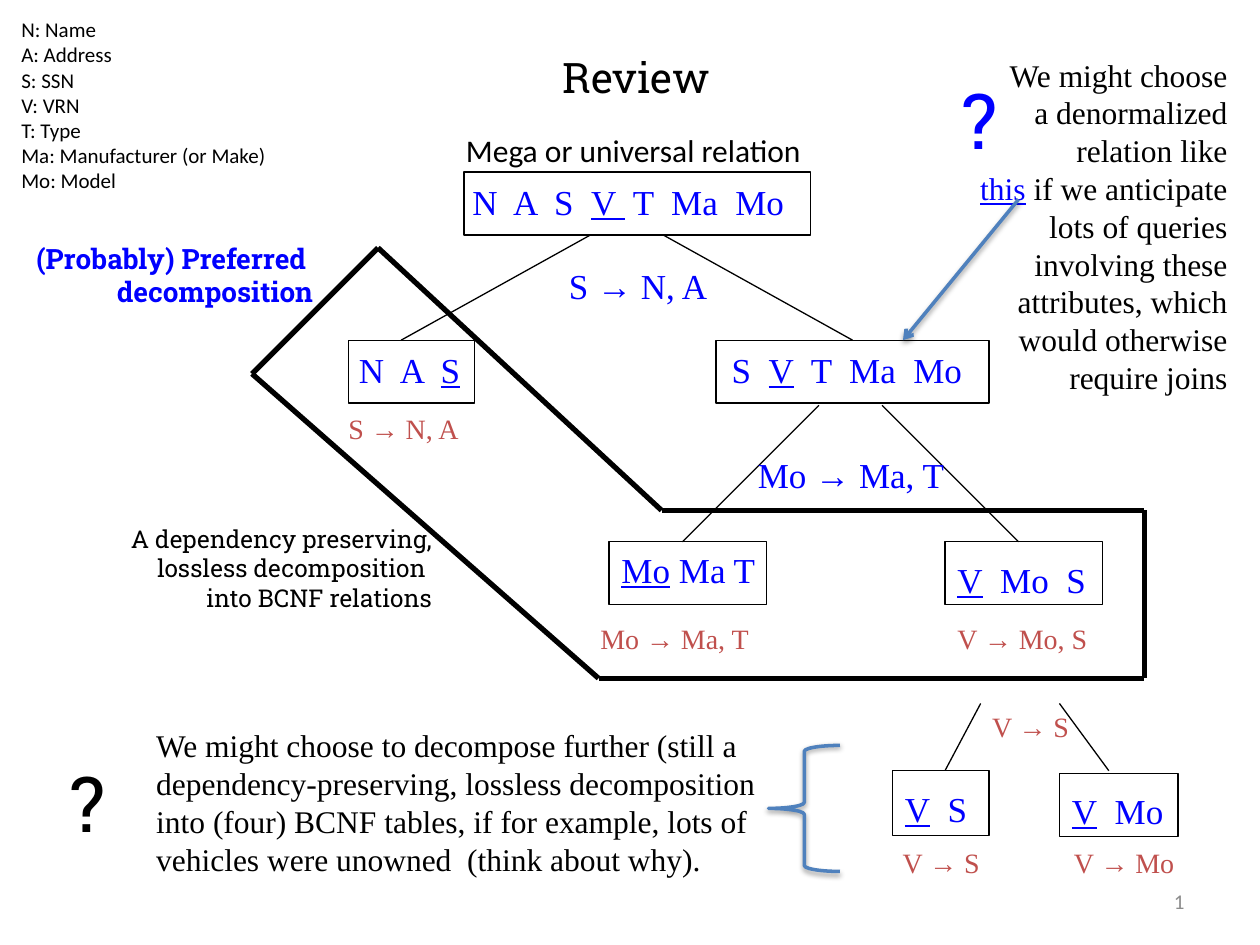
from itertools import pairwise
from lxml.etree import SubElement
from pptx import Presentation
from pptx.dml.color import RGBColor
from pptx.enum.shapes import MSO_CONNECTOR, MSO_SHAPE
from pptx.enum.text import MSO_ANCHOR, MSO_AUTO_SIZE, PP_ALIGN
from pptx.oxml.ns import qn
from pptx.util import Inches, Pt

BLACK = RGBColor(0x00, 0x00, 0x00)
BLUE = RGBColor(0x00, 0x00, 0xFF)
RED = RGBColor(0xC0, 0x50, 0x4D)
STEEL = RGBColor(0x4F, 0x81, 0xBD)
GRAY = RGBColor(0x8C, 0x8C, 0x8C)
SERIF, SLAB, SANS = "Times New Roman", "Roboto Slab", "Calibri"

prs = Presentation()
prs.slide_width, prs.slide_height = Inches(10), Inches(7.5)
s = prs.slides.add_slide(prs.slide_layouts[6])
COL = prs.slide_width / 120
ROW = prs.slide_height / 90


def add_text(text, x, y, w, h, size=20, font=SERIF, color=BLACK, bold=False,
             align=PP_ALIGN.LEFT, wrap=False, anchor=MSO_ANCHOR.TOP):
    sp = s.shapes.add_textbox(int(x * COL), int(y * ROW), int(w * COL), int(h * ROW))
    tf = sp.text_frame
    tf.word_wrap = wrap
    tf.auto_size = MSO_AUTO_SIZE.SHAPE_TO_FIT_TEXT if anchor == MSO_ANCHOR.TOP else MSO_AUTO_SIZE.NONE
    tf.vertical_anchor = anchor
    for i, line in enumerate(text.split("\n")):
        p = tf.paragraphs[0] if i == 0 else tf.add_paragraph()
        p.alignment = align
        for j, part in enumerate(line.split("_")):
            if not part:
                continue
            underlined = j % 2 == 1
            r = p.add_run()
            r.text = part
            r.font.size, r.font.name, r.font.bold = Pt(size), font, bold
            r.font.underline = underlined
            r.font.color.rgb = BLUE if underlined else color


def add_line(start, end, width=0.75, color=BLACK):
    cn = s.shapes.add_connector(MSO_CONNECTOR.STRAIGHT, int(start[0] * COL), int(start[1] * ROW),
                                int(end[0] * COL), int(end[1] * ROW))
    cn.line.width, cn.line.color.rgb = Pt(width), color
    SubElement(cn._element.spPr, qn("a:effectLst"))
    return cn


relations = {}
for name, x, y, w, h, text, tx, ty, tw in [
    ("universal", 44.2, 16.4, 33, 6, "N  A  S  _V _ T  Ma  Mo", 43.8, 16.6, 32.8),
    ("person", 33.2, 32.4, 12, 6, "N  A  _S_", 33, 32.6, 13),
    ("vehicle", 68.2, 32.4, 26, 6, "S  _V_  T  Ma  Mo", 68.5, 32.6, 25.5),
    ("model", 58, 51.6, 15, 6, "_Mo_ Ma T", 58, 51.6, 15.2),
    ("registration", 90, 51.6, 15, 6, "_V_  Mo  S", 90, 52.6, 14.9),
    ("owner", 85, 73.4, 9.2, 6.2, "_V_  S", 85, 74.4, 8.5),
    ("make", 100.9, 73.7, 11.3, 6, "_V_  Mo", 100.9, 74.6, 11.3),
]:
    sp = s.shapes.add_shape(MSO_SHAPE.RECTANGLE, int(x * COL), int(y * ROW), int(w * COL), int(h * ROW))
    sp.shadow.inherit = False
    sp.fill.background()
    sp.line.width, sp.line.color.rgb = Pt(0.75), BLACK
    relations[name] = sp
    add_text(text, tx, ty, tw, 5.2, color=BLUE)

for start, end, child in [
    ((56.2, 22.4), (38.2, 32.4), None),
    ((63.2, 22.4), (81.2, 32.4), "vehicle"),
    ((78, 38.6), (65, 51.6), None),
    ((84, 38.6), (97, 51.6), None),
    ((93.4, 67), (90, 73.4), None),
    ((100.9, 67), (105.6, 73.4), None),
]:
    cn = add_line(start, end)
    if child:
        cn.end_connect(relations[child], 0)

outline = [(24, 35.6), (57, 64.6), (109, 64.6), (109, 48.6), (63, 48.6), (36, 23.6), (24, 35.6)]
for start, end in pairwise(outline):
    add_line(start, end, width=3)

for text, x, y, w in [("S → N, A", 53, 24.6, 15.7), ("Mo → Ma, T", 71, 42.6, 20.2)]:
    add_text(text, x, y, w, 5.2, color=BLUE)

for text, x, y, w in [
    ("S → N, A", 32, 38.6, 13),
    ("Mo → Ma, T", 56, 58.6, 16.6),
    ("V → Mo, S", 90, 58.6, 15.5),
    ("V → S", 93.3, 67, 9.8),
    ("V → S", 84.8, 79.9, 9.8),
    ("V → Mo", 101.1, 79.9, 12),
]:
    add_text(text, x, y, w, 4.4, size=16, color=RED)

add_text("Review", 52.4, 4.3, 18.6, 6, size=24, font=SLAB, wrap=True)
add_text("Mega or universal relation", 43.2, 11.9, 34.8, 4.8, size=18, font=SANS)
add_text("N: Name\nA: Address\nS: SSN\nV: VRN\nT: Type\nMa: Manufacturer (or Make)\nMo: Model",
         0.85, 1, 26, 18.1, size=12, font=SANS)
add_text("(Probably) Preferred \ndecomposition", 0.9, 22.4, 30.1, 7.7, size=16, font=SLAB,
         color=BLUE, bold=True, align=PP_ALIGN.RIGHT)
add_text("A dependency preserving,\nlossless decomposition \ninto BCNF relations",
         10.45, 49.3, 31.9, 9.7, size=14, font=SLAB, align=PP_ALIGN.RIGHT)
add_text("We might choose\na denormalized\nrelation like\n_this_ if we anticipate lots of queries\n"
         "involving these attributes, which would otherwise\nrequire joins",
         90, 4.7, 28.1, 34, size=18, align=PP_ALIGN.RIGHT, wrap=True)
add_text("We might choose to decompose further (still a dependency-preserving, lossless "
         "decomposition into (four) BCNF tables, if for example, lots of vehicles were "
         "unowned  (think about why).", 13.7, 68.6, 61, 15.7, size=18, wrap=True)
add_text("?", 5.4, 71.4, 6.5, 10.1, size=44, font=SLAB)
add_text("?", 90.4, 6.3, 6.5, 10.1, size=44, font=SLAB, color=BLUE)
add_text("1", 86, 83.4, 28, 4.8, size=12, font=SANS, color=GRAY, align=PP_ALIGN.RIGHT,
         wrap=True, anchor=MSO_ANCHOR.MIDDLE)

arrow = add_line((97, 19), (86, 32.4), width=2, color=STEEL)
SubElement(arrow.line._get_or_add_ln(), qn("a:tailEnd"), type="arrow")

brace = s.shapes.add_shape(MSO_SHAPE.LEFT_BRACE, int(73.2 * COL), int(71 * ROW), int(6.8 * COL), int(12 * ROW))
brace.shadow.inherit = False
brace.fill.background()
brace.line.width, brace.line.color.rgb = Pt(2), STEEL

for sp in (arrow, brace):
    effects = sp._element.spPr.find(qn("a:effectLst"))
    shadow = SubElement(effects, qn("a:outerShdw"), blurRad=str(Pt(3.1)), dist=str(Pt(1.6)),
                        dir="5400000", rotWithShape="0")
    shade = SubElement(shadow, qn("a:srgbClr"), val=str(BLACK))
    SubElement(shade, qn("a:alpha"), val="38000")

prs.save("out.pptx")
